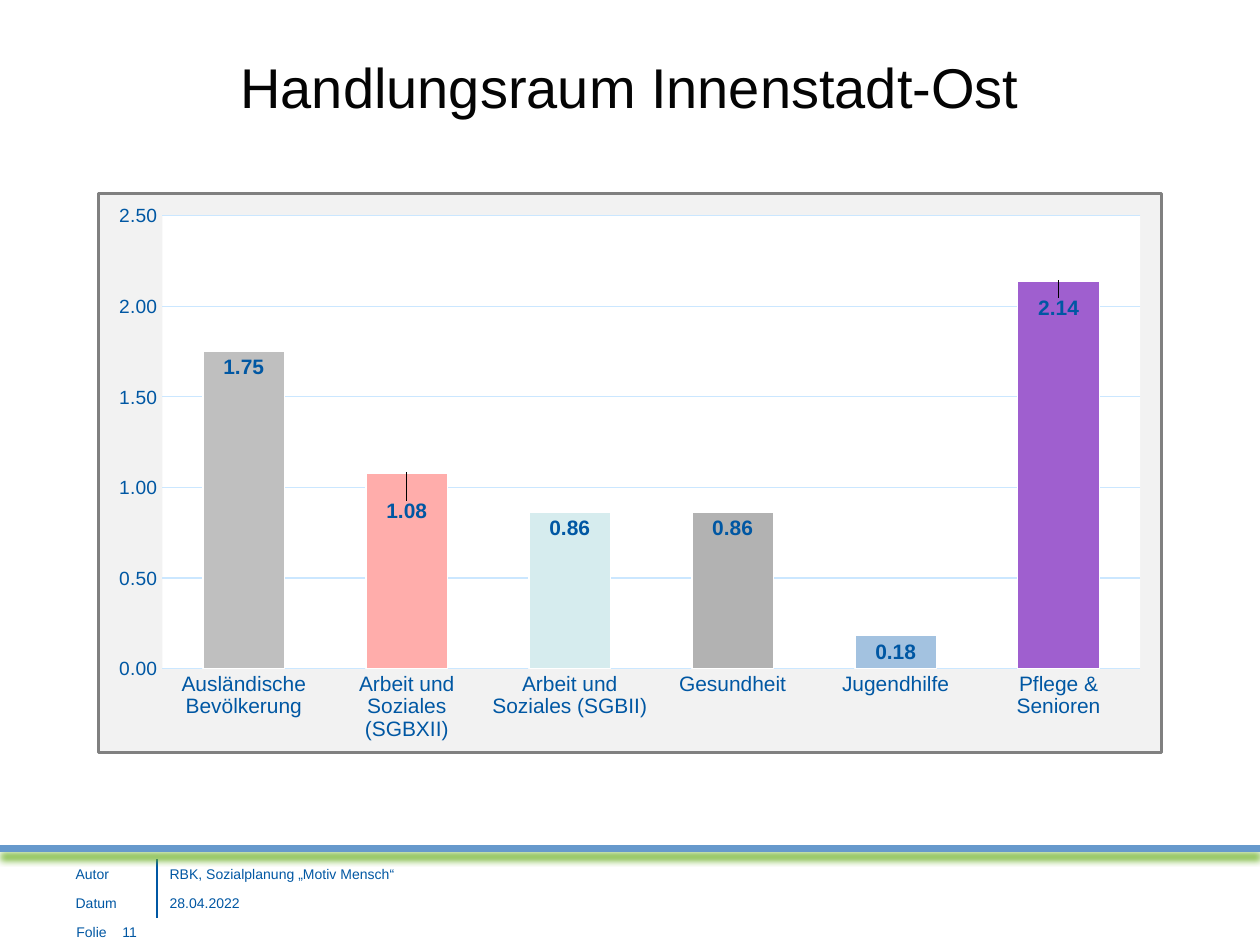
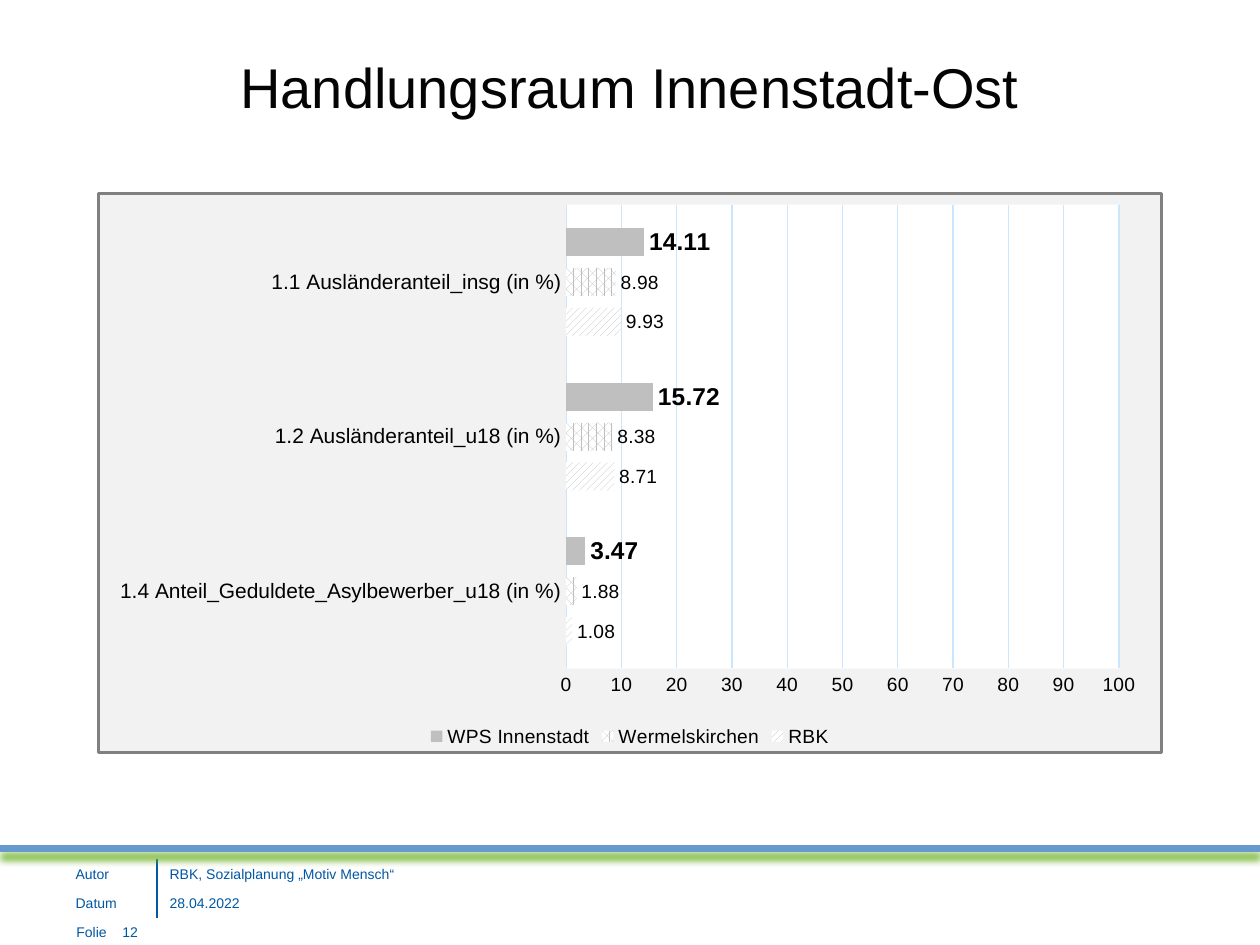
from pptx import Presentation
from pptx.chart.data import CategoryChartData
from pptx.dml.color import RGBColor
from pptx.enum.chart import XL_CHART_TYPE, XL_LABEL_POSITION, XL_LEGEND_POSITION, XL_TICK_MARK
from pptx.enum.dml import MSO_PATTERN
from pptx.enum.shapes import MSO_CONNECTOR
from pptx.enum.text import MSO_ANCHOR, PP_ALIGN
from pptx.oxml import parse_xml
from pptx.oxml.ns import nsdecls, qn
from pptx.util import Pt

COLUMN = XL_CHART_TYPE.COLUMN_CLUSTERED
BAR = XL_CHART_TYPE.BAR_CLUSTERED
INSIDE_END = XL_LABEL_POSITION.INSIDE_END
OUTSIDE_END = XL_LABEL_POSITION.OUTSIDE_END
LEGEND_BOTTOM = XL_LEGEND_POSITION.BOTTOM
NO_TICK = XL_TICK_MARK.NONE
WIDE_UPWARD = MSO_PATTERN.WIDE_UPWARD_DIAGONAL
PERCENT_60 = MSO_PATTERN.PERCENT_60
STRAIGHT = MSO_CONNECTOR.STRAIGHT
MIDDLE = MSO_ANCHOR.MIDDLE
BOTTOM = MSO_ANCHOR.BOTTOM
CENTER = PP_ALIGN.CENTER

EMU_PER_PX = 914400 / 126
FONT = "Arial"
NAVY = "0057A3"
BLUE = "6699CC"
GREEN = "6AB023"
TITLE_BLACK = "040404"
BLACK = "000000"
WHITE = "FFFFFF"
GRID = "CBE7FF"
PANEL = "F2F2F2"
BORDER = "808080"
GREY = "BFBFBF"
PLAIN_TABLE = "{2D5ABB26-0587-4C30-8999-92F81FD0307C}"

TITLE = "Handlungsraum Innenstadt-Ost"
FOOTER = [("Autor", "RBK, Sozialplanung „Motiv Mensch“"), ("Datum", "28.04.2022")]

CHARTS = [
    {
        "number": 11,
        "type": COLUMN,
        "categories": ["Ausländische Bevölkerung", "Arbeit und Soziales (SGBXII)",
                       "Arbeit und Soziales (SGBII)", "Gesundheit", "Jugendhilfe",
                       "Pflege & Senioren"],
        "series": [("Series 1", [1.75, 1.08, 0.86, 0.86, 0.18, 2.14], BLUE, None, 12, True)],
        "point_colors": [GREY, "FFADAB", "D6ECEE", "B2B2B2", "A3C2E0", "9F5FCF"],
        "label_shifts": {1: 0.04, 5: 0.02},
        "label_position": INSIDE_END,
        "text_color": NAVY,
        "axis_format": "0.00",
        "maximum": 2.5,
        "step": 0.5,
        "gap": 100,
        "overlap": -27,
        "plot": (0.06, 0.04, 0.92, 0.81),
        "legend": False,
    },
    {
        "number": 12,
        "type": BAR,
        "categories": ["1.4 Anteil_Geduldete_Asylbewerber_u18 (in %)",
                       "1.2 Ausländeranteil_u18 (in %)",
                       "1.1 Ausländeranteil_insg (in %)"],
        "series": [("RBK", [1.08, 8.71, 9.93], GREY, WIDE_UPWARD, 11, False),
                   ("Wermelskirchen", [1.88, 8.38, 8.98], GREY, PERCENT_60, 11, False),
                   ("WPS Innenstadt", [3.47, 15.72, 14.11], GREY, None, 14, True)],
        "point_colors": [],
        "label_shifts": {},
        "label_position": OUTSIDE_END,
        "text_color": BLACK,
        "axis_format": "0",
        "maximum": 100,
        "step": 10,
        "gap": 168,
        "overlap": -42,
        "plot": (0.44, 0.02, 0.52, 0.83),
        "legend": True,
    },
]


def px(*lengths):
    return [round(length * EMU_PER_PX) for length in lengths]


def rgb(value):
    return RGBColor.from_string(value)


presentation = Presentation()
presentation.slide_width, presentation.slide_height = px(1260, 945)
blank_layout = presentation.slide_layouts[6]

for content in CHARTS:
    slide = presentation.slides.add_slide(blank_layout)
    text_color = content["text_color"]
    fonts = []

    for text, box, size, color, alignment in [
        (f"Folie\t{content['number']}", (64, 907, 149, 50), 8, NAVY, None),
        (TITLE, (63, 38, 1134, 97), 32, TITLE_BLACK, CENTER),
    ]:
        frame = slide.shapes.add_textbox(*px(*box)).text_frame
        frame.word_wrap = True
        frame.vertical_anchor = MIDDLE
        paragraph = frame.paragraphs[0]
        paragraph.alignment = alignment
        if "\t" in text:
            paragraph._p.get_or_add_pPr().append(parse_xml(
                f'<a:tabLst {nsdecls("a")}><a:tab pos="{px(46)[0]}" algn="l"/></a:tabLst>'))
        run = paragraph.add_run()
        run.text = text
        fonts.append((run.font, size, color, False))

    table = slide.shapes.add_table(2, 2, *px(63, 859, 398, 58)).table
    table.first_row = False
    table.horz_banding = False
    table._tbl.tblPr.find(qn("a:tableStyleId")).text = PLAIN_TABLE
    for column, width in zip(table.columns, px(94, 304)):
        column.width = width
    for row_index, texts in enumerate(FOOTER):
        table.rows[row_index].height = px(29)[0]
        for column_index, text in enumerate(texts):
            cell = table.cell(row_index, column_index)
            cell.fill.background()
            cell.vertical_anchor = BOTTOM
            run = cell.text_frame.paragraphs[0].add_run()
            run.text = text
            fonts.append((run.font, 8, NAVY, False))
            side = ("lnR", "lnL")[column_index]
            cell._tc.get_or_add_tcPr().insert(0, parse_xml(
                f'<a:{side} {nsdecls("a")} w="{Pt(1)}"><a:solidFill>'
                f'<a:srgbClr val="{NAVY}"/></a:solidFill></a:{side}>'))

    band = slide.shapes.add_connector(STRAIGHT, *px(0, 849, 1260, 849))
    band.line.color.rgb = rgb(BLUE)
    band.line.width = Pt(4)
    band._element.spPr.append(parse_xml(
        f'<a:effectLst {nsdecls("a")}><a:outerShdw blurRad="{Pt(4)}" dist="{Pt(4)}" '
        f'dir="5400000" algn="t" rotWithShape="0"><a:srgbClr val="{GREEN}"/>'
        f'</a:outerShdw></a:effectLst>'))

    chart_data = CategoryChartData(number_format="0.00")
    chart_data.categories = content["categories"]
    for name, values, *style in content["series"]:
        chart_data.add_series(name, values)
    chart = slide.shapes.add_chart(content["type"], *px(97, 192, 1066, 562), chart_data).chart
    chart.has_title = False
    fonts.append((chart.font, 10, NAVY, False))
    chart.has_legend = content["legend"]
    if chart.has_legend:
        chart.legend.position = LEGEND_BOTTOM
        chart.legend.include_in_layout = False
        fonts.append((chart.legend.font, 11, text_color, False))

    category_axis, value_axis = chart.category_axis, chart.value_axis
    for axis, size in [(category_axis, 12), (value_axis, 11)]:
        axis.major_tick_mark = NO_TICK
        axis.minor_tick_mark = NO_TICK
        fonts.append((axis.tick_labels.font, size, text_color, False))
    value_axis.minimum_scale = 0
    value_axis.maximum_scale = content["maximum"]
    value_axis.major_unit = content["step"]
    value_axis.tick_labels.number_format = content["axis_format"]
    value_axis.tick_labels.number_format_is_linked = False
    value_axis.format.line.fill.background()
    for line in [category_axis.format.line, value_axis.major_gridlines.format.line]:
        line.color.rgb = rgb(GRID)
        line.width = Pt(0.75)

    plot = chart.plots[0]
    plot.gap_width = content["gap"]
    plot.overlap = content["overlap"]
    plot.vary_by_categories = False
    for series, (name, values, color, pattern, size, bold) in zip(plot.series, content["series"]):
        series.invert_if_negative = False
        fill = series.format.fill
        if pattern is None:
            fill.solid()
        else:
            fill.patterned()
            fill.pattern = pattern
            fill.back_color.rgb = rgb(WHITE)
        fill.fore_color.rgb = rgb(color)
        labels = series.data_labels
        labels.show_value = True
        labels.number_format = "0.00"
        labels.number_format_is_linked = False
        labels.position = content["label_position"]
        fonts.append((labels.font, size, text_color, bold))
        for index, point_color in enumerate(content["point_colors"]):
            point_format = series.points[index].format
            point_format.fill.solid()
            point_format.fill.fore_color.rgb = rgb(point_color)
            point_format.line.color.rgb = rgb(WHITE)
            point_format.line.width = Pt(0.75)
        for index, shift in content["label_shifts"].items():
            label = series.points[index].data_label
            label.position = content["label_position"]
            fonts.append((label.font, size, text_color, bold))
            label._dLbl.find(qn("c:idx")).addnext(parse_xml(
                f'<c:layout {nsdecls("c")}><c:manualLayout><c:x val="0"/>'
                f'<c:y val="{shift}"/></c:manualLayout></c:layout>'))

    plot_area = chart._chartSpace.chart.plotArea
    for layout in plot_area.findall(qn("c:layout")):
        plot_area.remove(layout)
    left, top, width, height = content["plot"]
    plot_area.insert(0, parse_xml(
        f'<c:layout {nsdecls("c")}><c:manualLayout><c:layoutTarget val="inner"/>'
        f'<c:xMode val="edge"/><c:yMode val="edge"/><c:x val="{left}"/><c:y val="{top}"/>'
        f'<c:w val="{width}"/><c:h val="{height}"/></c:manualLayout></c:layout>'))
    plot_area.append(parse_xml(
        f'<c:spPr {nsdecls("c", "a")}><a:solidFill><a:srgbClr val="{WHITE}"/></a:solidFill></c:spPr>'))
    chart._chartSpace.chart.addnext(parse_xml(
        f'<c:spPr {nsdecls("c", "a")}><a:solidFill><a:srgbClr val="{PANEL}"/></a:solidFill>'
        f'<a:ln w="{Pt(1.75)}"><a:solidFill><a:srgbClr val="{BORDER}"/></a:solidFill></a:ln></c:spPr>'))

    for font, size, color, bold in fonts:
        font.name = FONT
        font.size = Pt(size)
        font.bold = bold
        font.color.rgb = rgb(color)

presentation.save("out.pptx")
